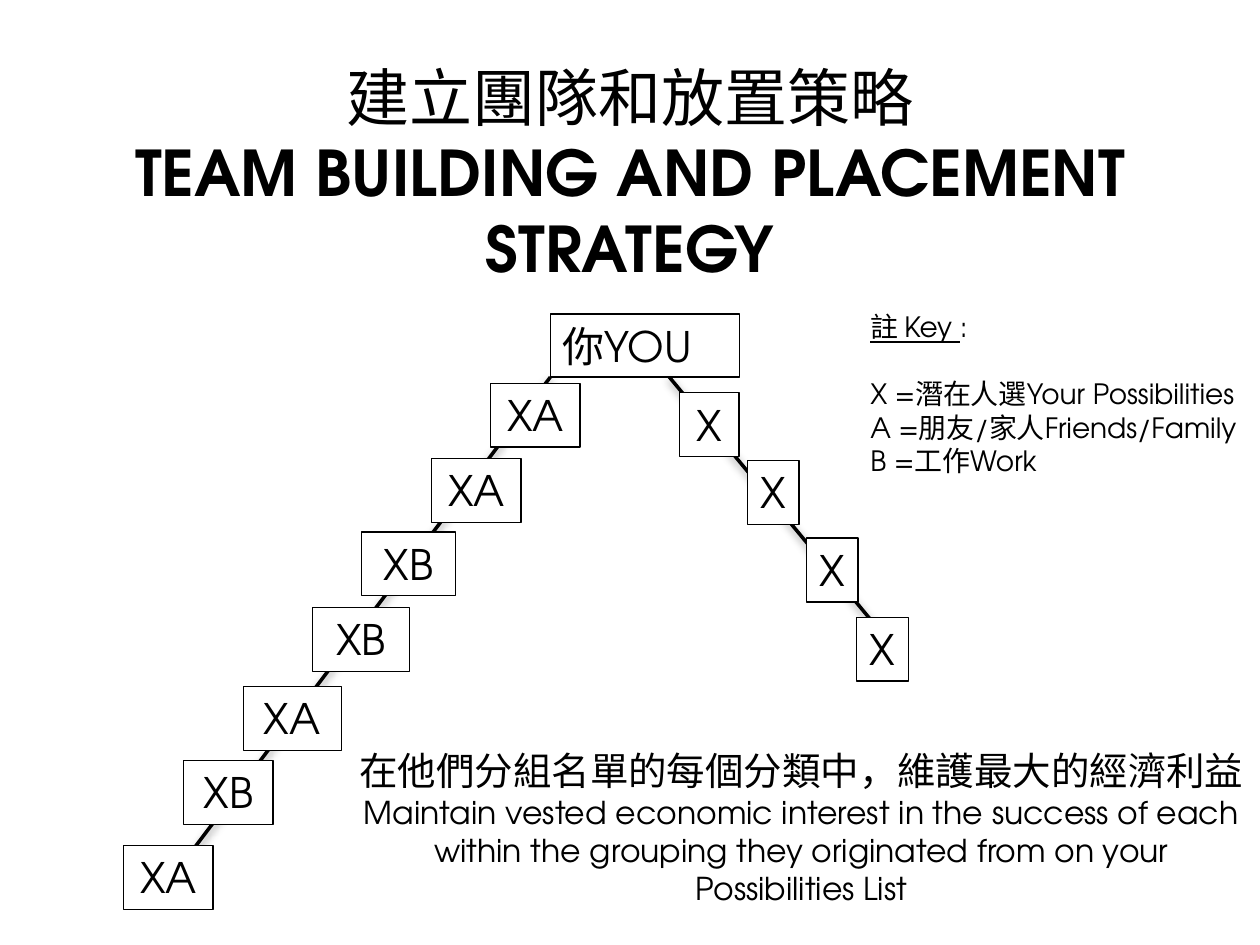
"""Build the team building and placement strategy slide."""
from dataclasses import dataclass
from typing import NamedTuple

import lxml.etree
import pptx
import pptx.dml.color
import pptx.enum.shapes
import pptx.enum.text
import pptx.oxml.ns
import pptx.util

Pt = pptx.util.Pt
Align = pptx.enum.text.PP_ALIGN
Anchor = pptx.enum.text.MSO_ANCHOR
AutoSize = pptx.enum.text.MSO_AUTO_SIZE


@dataclass(frozen=True)
class Theme:
    font: str = "TeX Gyre Adventor"
    ink: str = "000000"
    paper: str = "FFFFFF"
    title: float = 36
    node: float = 24
    chinese_note: float = 22
    english_note: float = 18
    key: float = 16
    border: float = 0.75
    branch: float = 2


class Span(NamedTuple):
    text: str
    size: float
    bold: bool = False
    underline: bool = False
    break_after: bool = False


class Node(NamedTuple):
    label: str
    left: float
    top: float
    width: float
    height: float = 36.5
    wrap: bool = True


class Branch(NamedTuple):
    start: tuple[float, float]
    end: tuple[float, float]


THEME = Theme()
BRANCHES = [
    Branch((382.5, 215.5), (502, 359.5)),
    Branch((314.5, 215.5), (105, 492.5)),
]
YOU = Node("你YOU", 314.5, 179.5, 108, 36)
NODES = [
    Node("XA", 280.5, 219, 51),
    Node("XA", 246.75, 262, 51),
    Node("XB", 206.75, 304, 53.5),
    Node("XB", 178.5, 347.25, 55.5),
    Node("XA", 139, 392.25, 56),
    Node("XB", 105, 434.5, 51),
    Node("XA", 70.75, 483.25, 51),
    Node("X", 388.25, 224.5, 34),
    Node("X", 427, 263.25, 29.5, wrap=False),
    Node("X", 460.75, 307.5, 29.5, wrap=False),
    Node("X", 489.5, 352.75, 29.5, wrap=False),
]


def color(code: str) -> pptx.dml.color.RGBColor:
    """Turn a hex code into a colour."""
    return pptx.dml.color.RGBColor.from_string(code)


def write(shape, paragraphs: list[list[Span]], *, align=Align.LEFT, anchor=Anchor.TOP,
          wrap: bool = True, grow: bool = True, first_gap: float = 0) -> None:
    """Fill a shape with paragraphs of formatted spans."""
    frame = shape.text_frame
    frame.word_wrap = wrap
    frame.vertical_anchor = anchor
    frame.auto_size = AutoSize.SHAPE_TO_FIT_TEXT if grow else AutoSize.NONE
    for index, spans in enumerate(paragraphs):
        paragraph = frame.add_paragraph() if index else frame.paragraphs[0]
        paragraph.alignment = align
        if first_gap and not index:
            paragraph.space_after = Pt(first_gap)
        for span in spans:
            run = paragraph.add_run()
            run.text = span.text
            run.font.name = THEME.font
            run.font.size = Pt(span.size)
            run.font.bold = span.bold
            run.font.underline = span.underline
            run.font.color.rgb = color(THEME.ink)
            if span.break_after:
                paragraph.add_line_break()


def add_text(slide, left: float, top: float, width: float, height: float,
             paragraphs: list[list[Span]], **text_format) -> None:
    """Place a text box."""
    box = slide.shapes.add_textbox(Pt(left), Pt(top), Pt(width), Pt(height))
    write(box, paragraphs, **text_format)


def add_node(slide, node: Node, *, filled: bool = True, align=Align.CENTER) -> None:
    """Draw one labelled box of the tree."""
    box = slide.shapes.add_shape(
        pptx.enum.shapes.MSO_SHAPE.RECTANGLE,
        Pt(node.left), Pt(node.top), Pt(node.width), Pt(node.height))
    box.shadow.inherit = False
    if filled:
        box.fill.solid()
        box.fill.fore_color.rgb = color(THEME.paper)
    else:
        box.fill.background()
    box.line.color.rgb = color(THEME.ink)
    box.line.width = Pt(THEME.border)
    write(box, [[Span(node.label, THEME.node)]], align=align, wrap=node.wrap)


def add_branch(slide, branch: Branch) -> None:
    """Draw one branch line with its soft shadow."""
    line = slide.shapes.add_connector(
        pptx.enum.shapes.MSO_CONNECTOR.STRAIGHT,
        *(Pt(value) for value in branch.start + branch.end))
    line.line.color.rgb = color(THEME.ink)
    line.line.width = Pt(THEME.branch)
    qn = pptx.oxml.ns.qn
    effects = lxml.etree.SubElement(line._element.spPr, qn("a:effectLst"))
    shadow = lxml.etree.SubElement(
        effects, qn("a:outerShdw"), blurRad=str(Pt(5)), dist=str(Pt(1.6)),
        dir="5400000", rotWithShape="0")
    tint = lxml.etree.SubElement(shadow, qn("a:srgbClr"), val=THEME.ink)
    lxml.etree.SubElement(tint, qn("a:alpha"), val="38000")


def main() -> None:
    """Build and save the slide."""
    deck = pptx.Presentation()
    deck.slide_width, deck.slide_height = Pt(720), Pt(540)
    slide = deck.slides.add_slide(deck.slide_layouts[6])

    for branch in BRANCHES:
        add_branch(slide, branch)
    add_text(slide, 36, 22.5, 648, 151, [[
        Span("建立團隊和放置策略", THEME.title, break_after=True),
        Span("TEAM BUILDING AND PLACEMENT STRATEGY", THEME.title, bold=True),
    ]], align=Align.CENTER, anchor=Anchor.MIDDLE, grow=False)
    add_node(slide, YOU, filled=False, align=Align.LEFT)
    for node in NODES:
        add_node(slide, node)

    add_text(slide, 196, 423.5, 524, 99.5, [
        [Span("在他們分組名單的每個分類中，維護最大的經濟利益", THEME.chinese_note)],
        [Span("Maintain vested economic interest in the success of each within the "
              "grouping they originated from on your Possibilities List",
              THEME.english_note)],
    ], align=Align.CENTER)
    meanings = ["X =潛在人選Your Possibilities", "A =朋友/家人Friends/Family", "B =工作Work"]
    add_text(slide, 490.25, 173.5, 235.5, 108, [
        [Span("註 Key ", THEME.key, underline=True), Span(":", THEME.key)],
        *([Span(meaning, THEME.key)] for meaning in meanings),
    ], grow=False, first_gap=19)
    deck.save("out.pptx")


if __name__ == "__main__":
    main()
